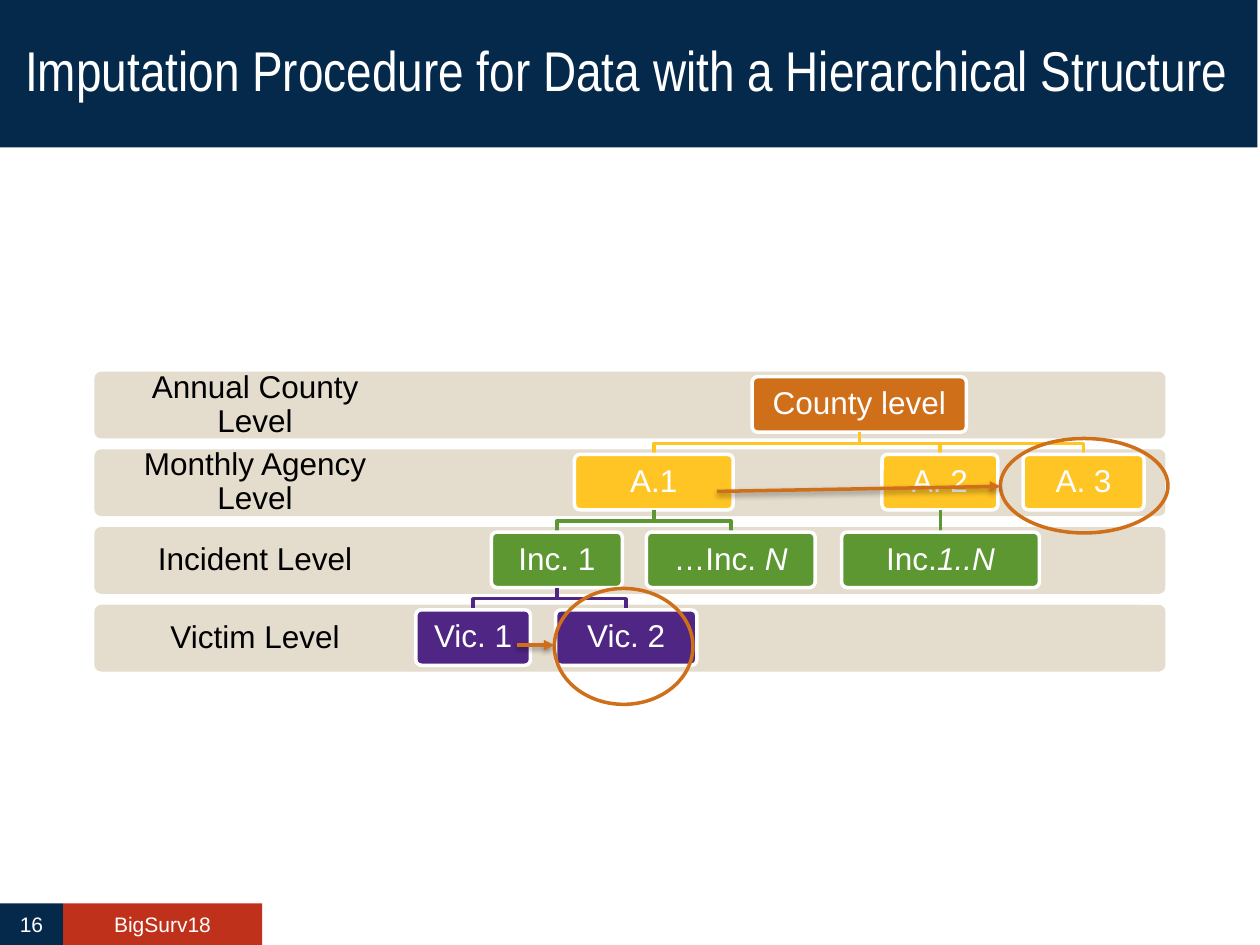
from lxml.etree import SubElement
from pptx import Presentation
from pptx.dml.color import RGBColor
from pptx.enum.shapes import MSO_CONNECTOR, MSO_SHAPE
from pptx.enum.text import MSO_ANCHOR, MSO_AUTO_SIZE, PP_ALIGN
from pptx.oxml import parse_xml
from pptx.oxml.ns import nsdecls, qn
from pptx.util import Inches, Pt

TITLE = "Imputation Procedure for Data with a Hierarchical Structure"
FOOTER = [("16", 0, 0.5, "04294A"), ("BigSurv18", 0.5, 1.58, "BF311A")]
LEVELS = [
    ("Annual County Level", "D06F1A"),
    ("Monthly Agency Level", "FFC525"),
    ("Incident Level", "5D9732"),
    ("Victim Level", "4F2683"),
]
TREE = ("County level", "", 5.97, 1.7, [
    ("A.1", "", 4.56, 1.26, [
        ("Inc. 1", "", 3.9, 1.04, [
            ("Vic. 1", "", 3.3, 0.91, []),
            ("Vic. 2", "", 4.41, 1.12, []),
        ]),
        ("…Inc. ", "N", 5.13, 1.34, []),
    ]),
    ("A. 2", "", 7, 0.92, [("Inc.", "1..N", 6.68, 1.57, [])]),
    ("A. 3", "", 8.12, 0.96, []),
])
IMPUTATIONS = [
    ((4.4, 4.67, 1.1, 0.92), (4.1, 5.12, 4.4, 5.12)),
    ((7.94, 3.48, 1.33, 0.75), (5.69, 3.9, 7.94, 3.86)),
]
WHITE, BLACK, BAND, NAVY, ORANGE = "FFFFFF", "000000", "E4DDCE", "04294A", "D06F1A"
BAND_LEFT, BAND_TOP, BAND_WIDTH, BAND_HEIGHT = 0.75, 2.95, 8.5, 0.53
BAND_PITCH = (4.8 - BAND_TOP) / 3
BOX_INSET, BOX_HEIGHT = 0.04, 0.44
SHADOW = (
    f'<a:effectLst {nsdecls("a")}><a:outerShdw blurRad="40000" dist="20000" dir="5400000" '
    'rotWithShape="0"><a:srgbClr val="000000"><a:alpha val="38000"/></a:srgbClr>'
    "</a:outerShdw></a:effectLst>"
)


def color(value):
    """Turn a hex string into a colour."""
    return RGBColor.from_string(value)


def apply(target, values):
    """Set each named attribute on the target."""
    for name, value in values.items():
        setattr(target, name, value)


def paint(shape, fill=None, line=None):
    """Give a shape its fill and outline, without a shadow."""
    shape.shadow.inherit = False
    if fill:
        shape.fill.solid()
        shape.fill.fore_color.rgb = color(fill)
    else:
        shape.fill.background()
    if line:
        stroke(shape, line)
    else:
        shape.line.fill.background()


def stroke(shape, value):
    """Draw a two-point line in the given colour."""
    shape.line.color.rgb = color(value)
    shape.line.width = Pt(2)


def write(shape, runs, size, ink, margins, font="Arial", align=PP_ALIGN.CENTER, spacing=0.9):
    """Write (text, italic) runs as one paragraph."""
    left, top, right, bottom = (Inches(margin) for margin in margins)
    frame = shape.text_frame
    apply(frame, {
        "auto_size": MSO_AUTO_SIZE.NONE, "word_wrap": True, "vertical_anchor": MSO_ANCHOR.MIDDLE,
        "margin_left": left, "margin_top": top, "margin_right": right, "margin_bottom": bottom,
    })
    para = frame.paragraphs[0]
    apply(para, {"alignment": align, "line_spacing": spacing})
    for text, italic in runs:
        span = para.add_run()
        span.text = text
        apply(span.font, {"name": font, "size": Pt(size), "italic": italic, "bold": False})
        span.font.color.rgb = color(ink)


def add_shape(page, kind, place, fill=None, line=None):
    """Add a painted preset shape."""
    shape = page.shapes.add_shape(kind, *(Inches(length) for length in place))
    paint(shape, fill, line)
    if kind == MSO_SHAPE.ROUNDED_RECTANGLE:
        shape.adjustments[0] = 0.1
    return shape


def add_line(page, ends, value, effects):
    """Add a straight connector with the given effect list."""
    line = page.shapes.add_connector(MSO_CONNECTOR.STRAIGHT, *(Inches(length) for length in ends))
    stroke(line, value)
    line._element.spPr.append(parse_xml(effects))
    return line


def add_elbow(page, start_x, end_x, top, bottom, value):
    """Add an open path that drops, turns and drops again."""
    middle = (top + bottom) / 2
    points = [(start_x, middle), (end_x, middle), (end_x, bottom)]
    builder = page.shapes.build_freeform(Inches(start_x), Inches(top))
    builder.add_line_segments([(Inches(x), Inches(y)) for x, y in points], close=False)
    paint(builder.convert_to_shape(), line=value)


def add_node(page, node, level=0):
    """Add a box, then each child with its link."""
    text, suffix, left, width, children = node
    top = BAND_TOP + BAND_PITCH * level + BOX_INSET
    place = (left, top, width, BOX_HEIGHT)
    box = add_shape(page, MSO_SHAPE.ROUNDED_RECTANGLE, place, LEVELS[level][1], WHITE)
    runs = [(text, False)] + ([(suffix, True)] if suffix else [])
    write(box, runs, 18, WHITE, (0.07,) * 4)
    for child in children:
        value = LEVELS[level + 1][1]
        center = child[2] + child[3] / 2
        bottom, next_top = top + BOX_HEIGHT, top + BAND_PITCH
        if len(children) == 1:
            plain = f'<a:effectLst {nsdecls("a")}/>'
            add_line(page, (center, bottom, center, next_top), value, plain)
        else:
            add_elbow(page, left + width / 2, center, bottom, next_top, value)
        add_node(page, child, level + 1)


def main():
    """Build the slide and save it."""
    deck = Presentation()
    apply(deck, {"slide_width": Inches(10), "slide_height": Inches(7.5)})
    page = deck.slides.add_slide(deck.slide_layouts[5])

    title = page.shapes.title
    apply(title, {"left": 0, "top": 0, "width": Inches(9.98), "height": Inches(1.17)})
    title.fill.solid()
    title.fill.fore_color.rgb = color(NAVY)
    write(title, [(TITLE, False)], 32, WHITE, (0.2, 0.1, 0.2, 0.1), "Arial Narrow", PP_ALIGN.LEFT)

    for index, (label, _) in enumerate(LEVELS):
        place = (BAND_LEFT, BAND_TOP + BAND_PITCH * index, BAND_WIDTH, BAND_HEIGHT)
        band = add_shape(page, MSO_SHAPE.ROUNDED_RECTANGLE, place, BAND)
        write(band, [(label, False)], 18, BLACK, (0.14, 0, 6.09, 0))
    add_node(page, TREE)

    for oval, arrow in IMPUTATIONS:
        add_shape(page, MSO_SHAPE.OVAL, oval, line=ORANGE)
        line = add_line(page, arrow, ORANGE, SHADOW)
        SubElement(line.line._get_or_add_ln(), qn("a:tailEnd"), type="triangle")

    for text, left, width, fill in FOOTER:
        tag = add_shape(page, MSO_SHAPE.RECTANGLE, (left, 7.17, width, 0.33), fill)
        write(tag, [(text, False)], 12, WHITE, (0.1, 0.05, 0.1, 0.05), spacing=1.0)
    deck.save("out.pptx")


if __name__ == "__main__":
    main()
